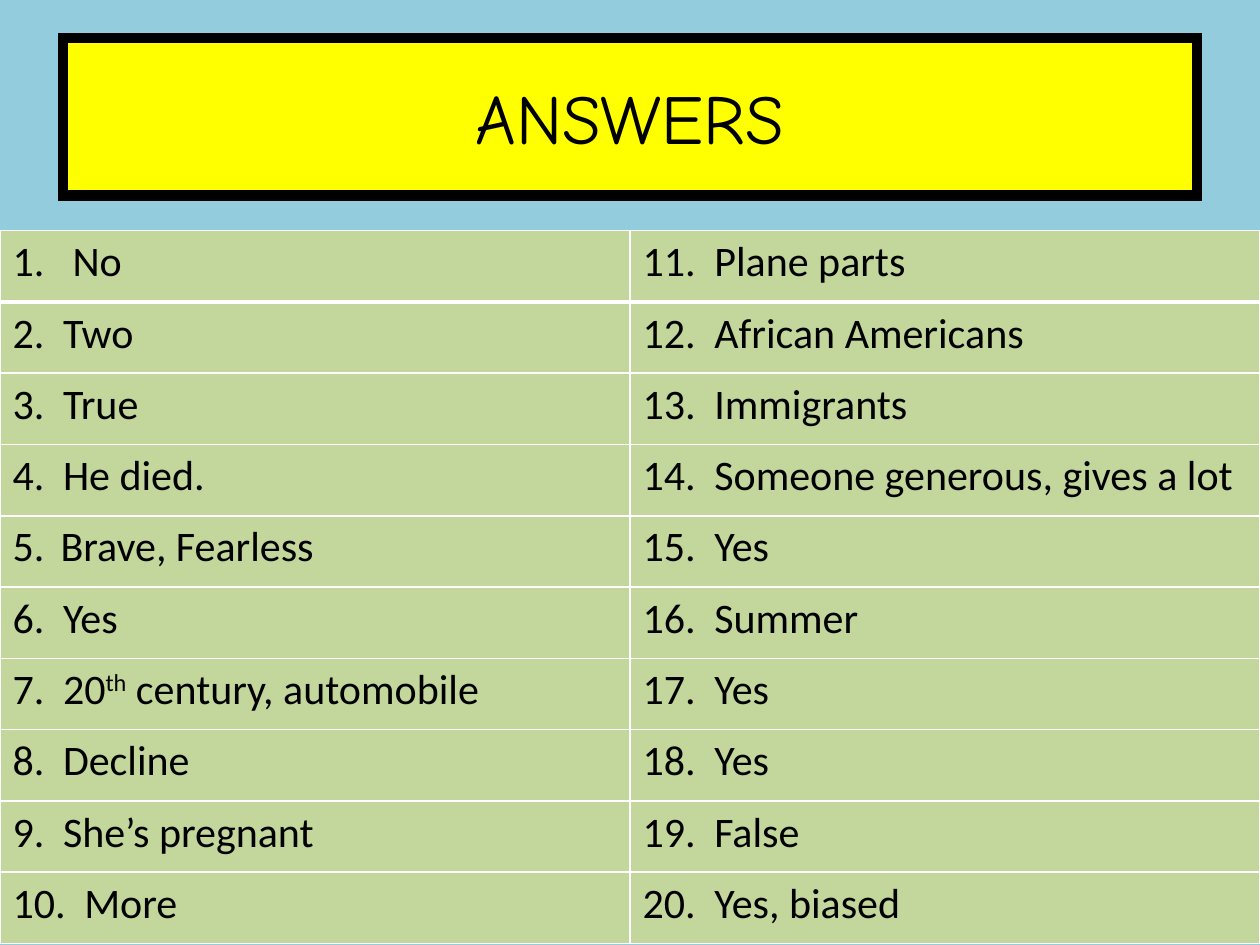
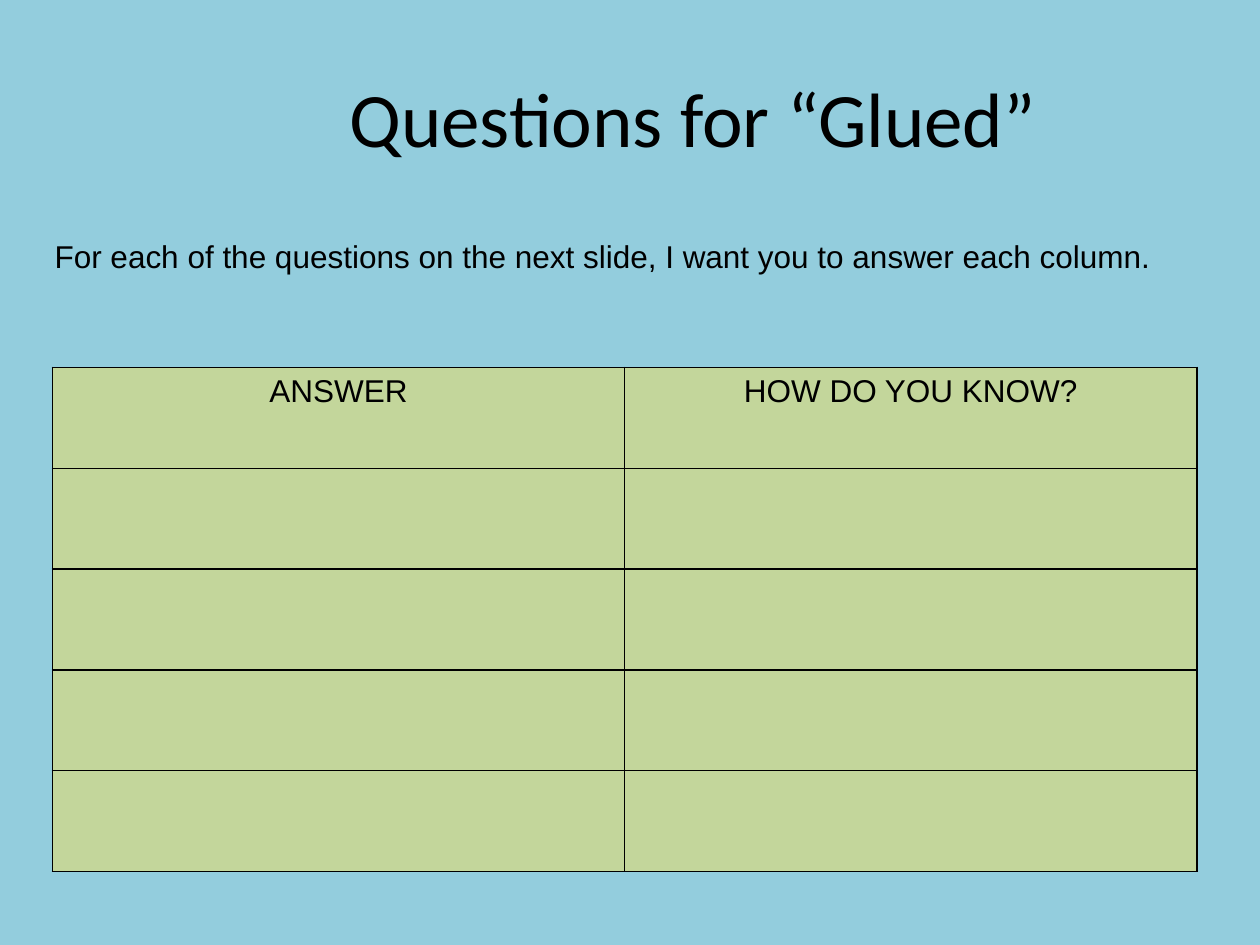
"""Build the answer key and the question worksheet slides."""
from dataclasses import dataclass
from typing import Any

from lxml import etree
from pptx import Presentation
from pptx.dml.color import RGBColor
from pptx.enum import text
from pptx.oxml import ns
from pptx.util import Pt


@dataclass(frozen=True)
class Theme:
    sky: str = "93CDDD"
    leaf: str = "C3D69B"
    banner: str = "FFFF00"
    ink: str = "000000"
    paper: str = "FFFFFF"
    sans: str = "Calibri"
    plain: str = "Arial"
    hand: str = "Comic Neue"
    title_size: float = 44
    banner_size: float = 40
    answer_size: float = 24
    note_size: float = 18


@dataclass(frozen=True)
class Box:
    left: float
    top: float
    width: float
    height: float


@dataclass(frozen=True)
class Style:
    font: str
    size: float
    centred: bool = False


@dataclass(frozen=True)
class Grid:
    box: Box
    rows: int
    columns: int
    border: str
    header_rule: float = 1


@dataclass(frozen=True)
class Answer:
    words: str
    hang: float = 0
    automatic: bool = False


THEME = Theme()
TITLE_BOX = Box(36, 21.6, 648, 90)
NOTE_BOX = Box(24, 131.8, 678, 72.7)
ANSWER_GRID = Grid(Box(0, 131.8, 720, 407.5), 10, 2, THEME.paper, 3)
WORKSHEET_GRID = Grid(Box(30, 210, 654, 288), 5, 2, THEME.ink)
TITLE_INDENT = 72
NARROW_HANG, WIDE_HANG = 28.8, 41
RAISED = "^"
ANSWERS = (
    Answer("No", 34.3), Answer("Two"), Answer("True"), Answer("He died."),
    Answer("Brave, Fearless", 27.4, True), Answer("Yes"),
    Answer("20^th^ century, automobile"), Answer("Decline"),
    Answer("She’s pregnant"), Answer("More"), Answer("Plane parts"),
    Answer("African Americans"), Answer("Immigrants"),
    Answer("Someone generous, gives a lot"), Answer("Yes"), Answer("Summer"),
    Answer("Yes"), Answer("Yes"), Answer("False"), Answer("Yes, biased"),
)
HEADINGS = ("ANSWER", "HOW DO YOU KNOW?")


def add_xml(parent: Any, tag: str, **attributes: str) -> Any:
    """Append a drawing element to its parent."""
    return etree.SubElement(parent, ns.qn(f"a:{tag}"), attributes)


def paint(fill: Any, colour: str) -> None:
    """Give a fill one solid colour."""
    fill.solid()
    fill.fore_color.rgb = RGBColor.from_string(colour)


def indent(para: Any, left: float, first: float = 0) -> Any:
    """Set the paragraph margin and first-line indent."""
    properties = para._p.get_or_add_pPr()
    properties.set("marL", str(Pt(left)))
    properties.set("indent", str(Pt(first)))
    return properties


def format_para(para: Any, style: Style) -> None:
    """Apply a text style to a paragraph and its runs."""
    para.alignment = text.PP_ALIGN.CENTER if style.centred else text.PP_ALIGN.LEFT
    for span in para.runs:
        span.font.name = style.font
        span.font.size = Pt(style.size)
        span.font.bold = False
        span.font.color.rgb = RGBColor.from_string(THEME.ink)


def fill_placeholder(shape: Any, box: Box, words: str, style: Style) -> Any:
    """Place and write a placeholder, and return its paragraph."""
    shape.left, shape.top = Pt(box.left), Pt(box.top)
    shape.width, shape.height = Pt(box.width), Pt(box.height)
    frame = shape.text_frame
    frame.text = words
    frame.word_wrap = True
    frame.auto_size = text.MSO_AUTO_SIZE.NONE
    format_para(frame.paragraphs[0], style)
    return frame.paragraphs[0]


def set_borders(cell: Any, colour: str, top: float, bottom: float) -> None:
    """Draw the four edges of a cell."""
    properties = cell._tc.get_or_add_tcPr()
    widths = {"lnL": 1, "lnR": 1, "lnT": top, "lnB": bottom}
    for position, (tag, width) in enumerate(widths.items()):
        edge = add_xml(properties, tag, w=str(Pt(width)))
        add_xml(add_xml(edge, "solidFill"), "srgbClr", val=colour)
        properties.insert(position, edge)


def add_grid(page: Any, grid: Grid) -> Any:
    """Add a table of equal cells with fills and borders."""
    box = grid.box
    table = page.shapes.add_table(
        grid.rows, grid.columns, Pt(box.left), Pt(box.top), Pt(box.width), Pt(box.height)
    ).table
    table.first_row = table.horz_banding = False
    for column in table.columns:
        column.width = Pt(box.width / grid.columns)
    for index, row in enumerate(table.rows):
        row.height = Pt(box.height / grid.rows)
        top = grid.header_rule if index == 1 else 1
        bottom = grid.header_rule if index == 0 else 1
        for cell in row.cells:
            paint(cell.fill, THEME.leaf)
            set_borders(cell, grid.border, top, bottom)
    return table


def write_answer(para: Any, number: int, answer: Answer) -> None:
    """Write one numbered answer with a hanging indent."""
    first, *others = answer.words.split(RAISED)
    para.text = first if answer.automatic else f"{number}.\t{first}"
    for position, part in enumerate(others):
        span = para.add_run()
        span.text = part
        if position % 2 == 0:
            span.font._element.set("baseline", "30000")
    format_para(para, Style(THEME.sans, THEME.answer_size))
    hang = answer.hang or (NARROW_HANG if number < 10 else WIDE_HANG)
    properties = indent(para, hang, -hang)
    if answer.automatic:
        add_xml(properties, "buFont", typeface="+mj-lt")
        add_xml(properties, "buAutoNum", type="arabicPeriod", startAt=str(number))


def build_answers(deck: Any) -> None:
    """Build the answer key slide."""
    page = deck.slides.add_slide(deck.slide_layouts.get_by_name("Title Only"))
    title = page.shapes.title
    fill_placeholder(title, TITLE_BOX, "ANSWERS", Style(THEME.hand, THEME.banner_size, True))
    paint(title.fill, THEME.banner)
    paint(title.line.fill, THEME.ink)
    title.line.width = Pt(6)
    add_xml(title._element.spPr.find(ns.qn("a:ln")), "miter", lim="800000")
    table = add_grid(page, ANSWER_GRID)
    for index, answer in enumerate(ANSWERS):
        column, row = divmod(index, ANSWER_GRID.rows)
        write_answer(table.cell(row, column).text_frame.paragraphs[0], index + 1, answer)


def build_worksheet(deck: Any) -> None:
    """Build the question worksheet slide."""
    page = deck.slides.add_slide(deck.slide_layouts.get_by_name("Title and Content"))
    heading = fill_placeholder(
        page.shapes.title, TITLE_BOX, "Questions for “Glued”",
        Style(THEME.sans, THEME.title_size, True),
    )
    indent(heading, TITLE_INDENT)
    note = fill_placeholder(
        page.placeholders[1], NOTE_BOX,
        "For each of the questions on the next slide, I want you to answer each column.",
        Style(THEME.plain, THEME.note_size),
    )
    note.space_before = Pt(0)
    add_xml(indent(note, 0), "buNone")
    table = add_grid(page, WORKSHEET_GRID)
    for column, words in enumerate(HEADINGS):
        para = table.cell(0, column).text_frame.paragraphs[0]
        para.text = words
        format_para(para, Style(THEME.plain, THEME.note_size, True))


def main() -> None:
    """Build and save the deck."""
    deck = Presentation()
    deck.slide_width, deck.slide_height = Pt(720), Pt(540)
    paint(deck.slide_master.background.fill, THEME.sky)
    build_answers(deck)
    build_worksheet(deck)
    deck.save("out.pptx")


if __name__ == "__main__":
    main()
